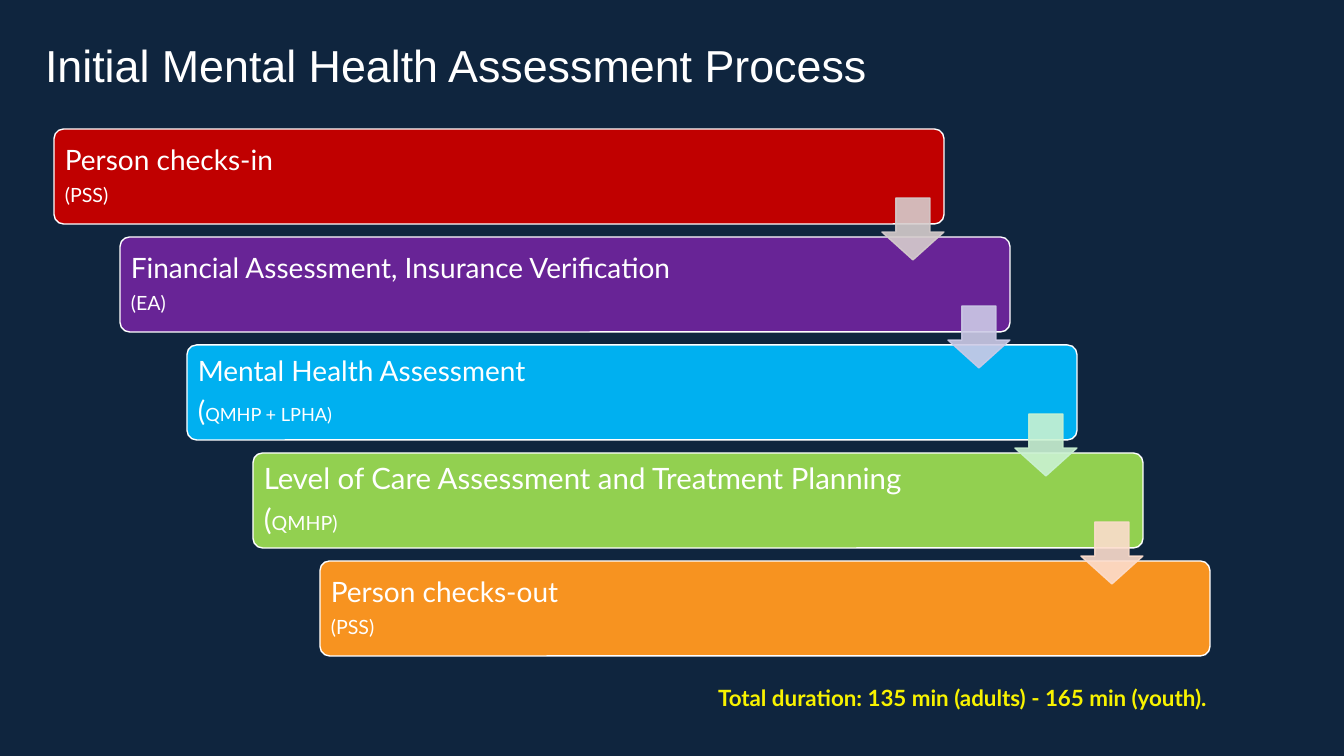
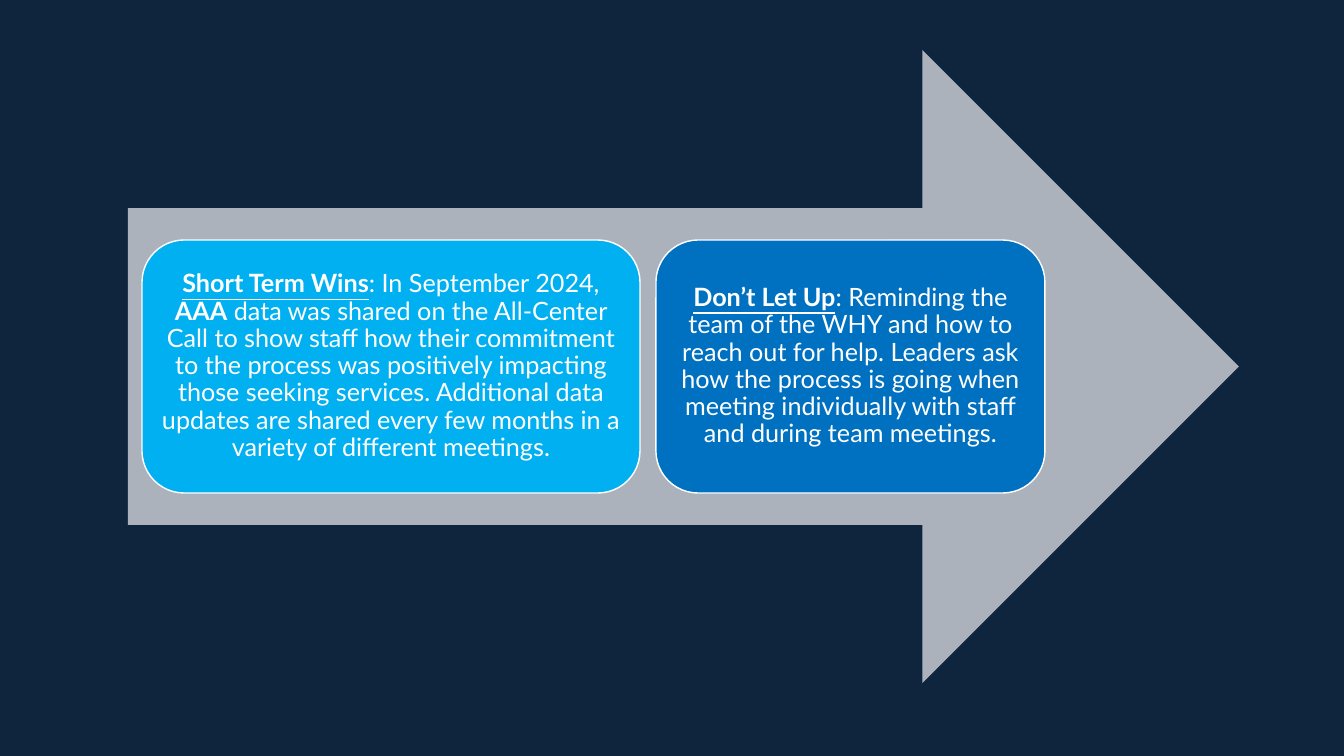
from lxml.etree import SubElement
from pptx import Presentation
from pptx.dml.color import RGBColor
from pptx.enum.shapes import MSO_SHAPE as Preset
from pptx.enum.text import MSO_ANCHOR as Anchor, MSO_AUTO_SIZE as AutoSize, PP_ALIGN as Align
from pptx.oxml.ns import qn
from pptx.util import Pt

EMU_PER_PX = 914400 / 100.8
NAVY, WHITE, YELLOW = "0F253E", "FFFFFF", "F8F200"
BODY_FONT, TITLE_FONT = "Lato", "Arial"
TITLE_ONLY, BLANK = 5, 6  # layouts of the default template

# Process staircase: heading, heading size, role runs, fill
STEPS = [
    ("Person checks-in", 20, [("(PSS)", 14)], "C00000"),
    ("Financial Assessment, Insurance Verification", 20, [("(EA)", 14)], "682496"),
    ("Mental Health Assessment", 20, [("(", 20), ("QMHP + LPHA)", 13)], "00B0F0"),
    ("Level of Care Assessment and Treatment Planning", 21, [("(", 21), ("QMHP)", 14)], "92D050"),
    ("Person checks-out", 20, [("(PSS)", 14)], "F79320"),
]
HANDOFF_FILLS = ["D6CDCD", "CCCAE6", "CAF2D2", "FCDDCD"]
STAIR_RISE = 108

# Change cards: left, width, fill, runs
EMPHASIS = {"bold": True, "underline": True}
CARDS = [
    (142, 498, "00B0F0", [
        ("Short Term Wins", EMPHASIS),
        (": In September 2024, ", {}),
        ("AAA", {"bold": True}),
        (" data was shared on the All-Center Call to show staff how their commitment "
         "to the process was positively impacting those seeking services. Additional data "
         "updates are shared every few months in a variety of different meetings.", {}),
    ]),
    (656, 389, "0070C0", [
        ("Don’t Let Up", EMPHASIS),
        (": Reminding the team of the WHY and how to reach out for help. Leaders ask how "
         "the process is going when meeting individually with staff and during team meetings.", {}),
    ]),
]


def px(length):
    return round(length * EMU_PER_PX)


def box(left, top, width, height):
    return [px(length) for length in (left, top, width, height)]


def paint(color_holder, color):
    color_holder.solid()
    color_holder.fore_color.rgb = RGBColor.from_string(color)


def set_all(target, formats):
    for attribute, value in formats.items():
        setattr(target, attribute, value)


def format_frame(frame, margin, anchor, auto_size=AutoSize.NONE):
    set_all(frame, {"word_wrap": True, "auto_size": auto_size, "vertical_anchor": anchor,
                    "margin_left": px(margin), "margin_right": px(margin),
                    "margin_top": px(margin), "margin_bottom": px(margin)})


def write(frame, paragraphs, color=WHITE, font=BODY_FONT, **layout):
    """Fill a text frame; each paragraph is a list of (text, font formats)."""
    for index, runs in enumerate(paragraphs):
        paragraph = frame.add_paragraph() if index else frame.paragraphs[0]
        set_all(paragraph, layout)
        for text, formats in runs:
            run = paragraph.add_run()
            run.text = text
            set_all(run.font, {"name": font, **formats})
            paint(run.font.fill, color)


def add_preset(slide, preset, place, fill, line=None, adjustments=(), opacity=100):
    shape = slide.shapes.add_shape(preset, *box(*place))
    shape.shadow.inherit = False
    for index, value in enumerate(adjustments):
        shape.adjustments[index] = value
    paint(shape.fill, fill)
    if line:
        paint(shape.line.fill, line)
        shape.line.width = Pt(1)
    else:
        shape.line.fill.background()
    if opacity < 100:
        for color in shape._element.spPr.iter(qn("a:srgbClr")):
            SubElement(color, qn("a:alpha"), val=str(opacity * 1000))
    return shape


def add_card(slide, place, fill, paragraphs, margin, align, adjustments=()):
    card = add_preset(slide, Preset.ROUNDED_RECTANGLE, place, fill, WHITE, adjustments)
    format_frame(card.text_frame, margin, Anchor.MIDDLE)
    write(card.text_frame, paragraphs, alignment=align, line_spacing=0.9, space_after=Pt(7))


def add_title(slide, text):
    title = slide.shapes.title
    set_all(title, dict(zip(("left", "top", "width", "height"), box(32, 25, 1252, 85))))
    format_frame(title.text_frame, 13, Anchor.TOP)
    write(title.text_frame, [[(text, {"size": Pt(32)})]], font=TITLE_FONT, alignment=Align.LEFT)


def stair_shift(index):
    return 133 * index // 2


def build_process(slide):
    add_title(slide, "Initial Mental Health Assessment Process")

    # Staircase of steps
    for index, (heading, size, role, fill) in enumerate(STEPS):
        paragraphs = [[(text, {"size": Pt(points)}) for text, points in runs]
                      for runs in ([(heading, size)], role)]
        place = (54 + stair_shift(index), 129 + STAIR_RISE * index, 890, 95)
        add_card(slide, place, fill, paragraphs, 8, Align.LEFT, [0.1])

    # Arrows from each step to the next
    for index, fill in enumerate(HANDOFF_FILLS):
        place = (882 + stair_shift(index), 198 + STAIR_RISE * index, 62, 62)
        add_preset(slide, Preset.DOWN_ARROW, place, fill, fill, [0.55, 0.45], 90)

    # Total duration
    duration = slide.shapes.add_textbox(*box(685, 674, 555, 41)).text_frame
    format_frame(duration, 5, Anchor.TOP, AutoSize.SHAPE_TO_FIT_TEXT)
    write(duration, [[("Total duration: 135 min (adults) - 165 min (youth).",
                       {"size": Pt(16), "bold": True})]],
          color=YELLOW, alignment=Align.CENTER, line_spacing=1.2)


def build_change(slide):
    # Arrow behind the cards
    add_preset(slide, Preset.RIGHT_ARROW, (128, 50, 1111, 633), WHITE, opacity=65)

    for left, width, fill, runs in CARDS:
        sized = [(text, {"size": Pt(18), **formats}) for text, formats in runs]
        add_card(slide, (left, 240, width, 253), fill, [sized], 7, Align.CENTER)


def main():
    deck = Presentation()
    deck.slide_width, deck.slide_height = px(1344), px(756)
    paint(deck.slide_master.background.fill, NAVY)
    for layout, build in ((TITLE_ONLY, build_process), (BLANK, build_change)):
        build(deck.slides.add_slide(deck.slide_layouts[layout]))
    deck.save("out.pptx")


if __name__ == "__main__":
    main()
